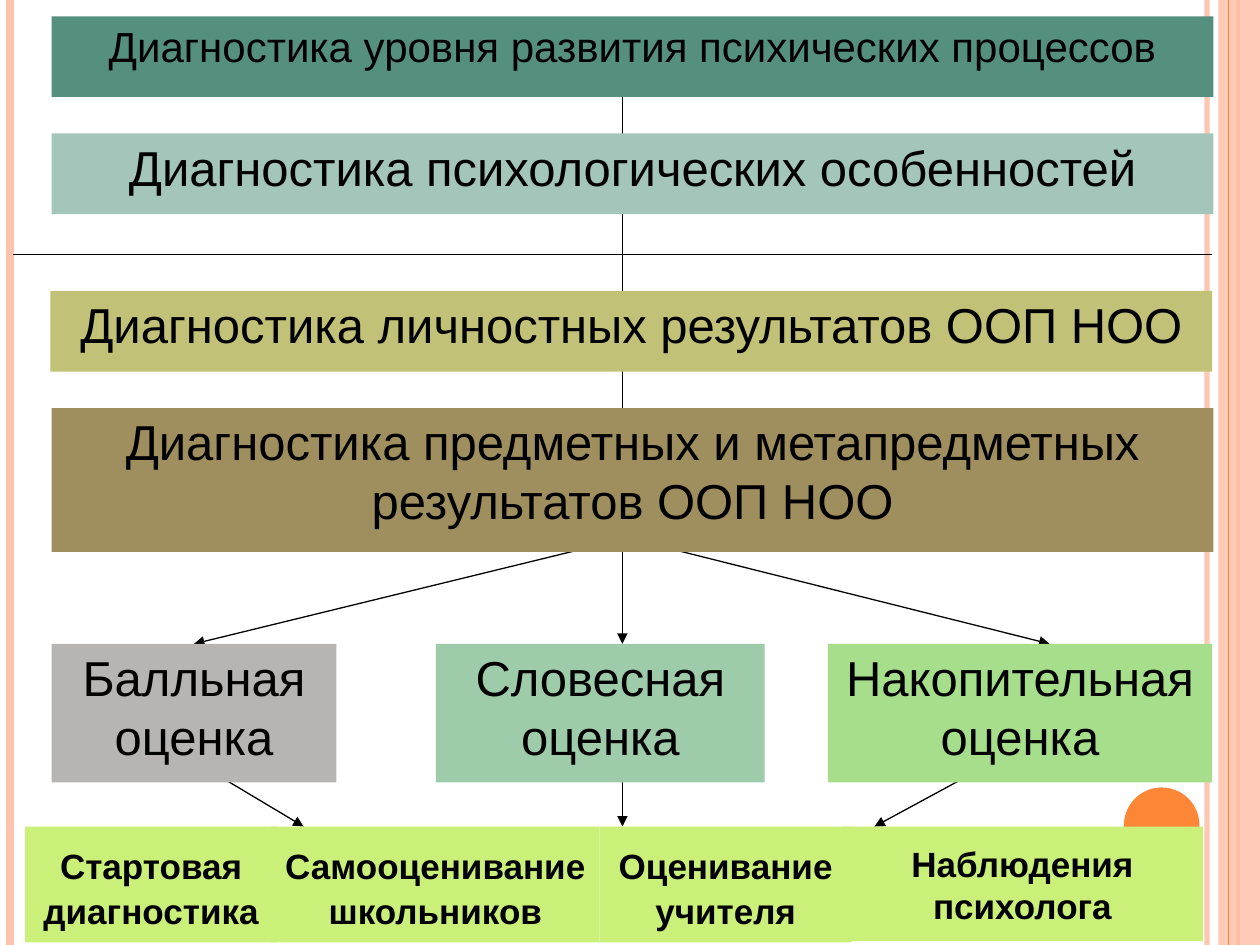
from lxml.etree import SubElement
from pptx import Presentation
from pptx.dml.color import RGBColor
from pptx.enum.shapes import MSO_CONNECTOR as Link, MSO_SHAPE as Shape
from pptx.enum.text import MSO_ANCHOR as Anchor, PP_ALIGN as Align
from pptx.oxml.ns import qn
from pptx.util import Inches, Pt

COLORS = {
    "black": "000000", "peach": "FEC3AE", "orange": "FE8637",
    "processes": "558F7D", "features": "A4C6BA", "personal": "C1C177",
    "subject": "A08F5E", "points": "B7B5B3", "verbal": "9ECCAA",
    "portfolio": "A7DE8C", "method": "CBF07A",
}
COLUMNS, ROWS = 100, 75


class Diagram:
    """Draws styled elements on one slide, placed by grid columns and rows."""

    def __init__(self, deck):
        self.page = deck.slides.add_slide(deck.slide_layouts[6])
        self.column = deck.slide_width / COLUMNS
        self.row = deck.slide_height / ROWS
        self.font = "Arial"

    def place(self, x, y):
        return round(x * self.column), round(y * self.row)

    def paint(self, fill, color, opacity=100):
        fill.solid()
        fill.fore_color.rgb = RGBColor.from_string(COLORS[color])
        if opacity < 100:
            tint = fill._xPr.find(qn("a:solidFill"))[0]
            SubElement(tint, qn("a:alpha")).set("val", str(opacity * 1000))

    def shape(self, kind, left, top, width, height, color, opacity=100):
        shape = self.page.shapes.add_shape(
            kind, *self.place(left, top), *self.place(width, height))
        shape.shadow.inherit = False
        shape.line.fill.background()
        self.paint(shape.fill, color, opacity)
        return shape

    def line(self, start, end, color="black", width=0.75, arrow=False, opacity=100):
        line = self.page.shapes.add_connector(
            Link.STRAIGHT, *self.place(*start), *self.place(*end))
        line.line.width = Pt(width)
        self.paint(line.line.fill, color, opacity)
        if arrow:
            SubElement(line.line._get_or_add_ln(), qn("a:tailEnd")).set("type", "triangle")
        SubElement(line._element.spPr, qn("a:effectLst"))
        return line

    def box(self, left, top, width, height, color, spans, bold=False, inset=0.03):
        box = self.shape(Shape.RECTANGLE, left, top, width, height, color)
        frame = box.text_frame
        frame.word_wrap = True
        frame.vertical_anchor = Anchor.TOP
        frame.margin_left = frame.margin_right = Inches(0.06)
        frame.margin_top, frame.margin_bottom = Inches(inset), Inches(0.03)
        para = frame.paragraphs[0]
        para.alignment = Align.CENTER
        for text, size in spans:
            span = para.add_run()
            span.text = text
            span.font.name = self.font
            span.font.size = Pt(size)
            span.font.bold = bold
            span.font.color.rgb = RGBColor.from_string(COLORS["black"])
        return box


def draw_frame(diagram):
    for x, color, width, opacity in (
            (95.8, "peach", 3, 93), (0.8, "peach", 4.5, 100), (98.3, "orange", 1.5, 100)):
        diagram.line((x, 0), (x, ROWS), color, width, opacity=opacity)
    diagram.shape(Shape.RECTANGLE, 96.7, 0, 3.3, ROWS, "peach", 87)
    diagram.line((97.5, 0), (97.5, ROWS), "orange")
    diagram.shape(Shape.OVAL, 89.2, 62.5, 6, 6, "orange")


def draw_scheme(diagram):
    axis, left, wide = 49.4, 4.1, 92.2
    grades_top, methods_top = 51.1, 65.6
    for start, end in ((axis, axis), (79, 69.4), (15.4, 24.1)):
        diagram.line((start, 60.4), (end, methods_top), arrow=True)
    for start, end in ((axis, axis), (50.2, 83.3)):
        diagram.line((start, 42.8), (end, grades_top), arrow=True)
    points_arrow = diagram.line((axis, 42.8), (15.4, grades_top), arrow=True)
    diagram.line((axis, 5.4), (axis, 41.7))

    for x, y, height, color, text, size in (
            (left, 1.3, 6.4, "processes", "Диагностика уровня развития психических процессов", 24),
            (left, 10.6, 6.4, "features", "Диагностика психологических особенностей", 28),
            (4, 23.1, 6.4, "personal", "Диагностика личностных результатов ООП НОО", 28),
            (left, 32.4, 11.4, "subject",
             "Диагностика предметных и метапредметных результатов ООП НОО", 28)):
        diagram.box(x, y, wide, height, color, [(text, size)])

    grades = [
        diagram.box(x, grades_top, width, 11, color, [(text, 28)])
        for x, width, color, text in (
            (left, 22.6, "points", "Балльная оценка"),
            (34.6, 26.1, "verbal", "Словесная оценка"),
            (65.7, 30.5, "portfolio", "Накопительная оценка"))]
    points_arrow.end_connect(grades[0], 0)

    for x, width, first, second in (
            (2, 20, "Стартовая", "диагностика"),
            (21.5, 26.1, "Самооценивание", "школьников"),
            (47.6, 20, "Оценивание", "учителя")):
        spans = [(first, 20), (" ", 28), (second, 20)]
        diagram.box(x, methods_top, width, 9.2, "method", spans, bold=True)
    diagram.box(66.8, methods_top, 28.7, 9.1, "method",
                [("Наблюдения психолога", 20)], bold=True, inset=0.13)
    diagram.line((1, 20.2), (96.2, 20.2))


def main():
    deck = Presentation()
    deck.slide_width, deck.slide_height = Inches(10), Inches(7.5)
    diagram = Diagram(deck)
    draw_frame(diagram)
    draw_scheme(diagram)
    deck.save("out.pptx")


if __name__ == "__main__":
    main()
